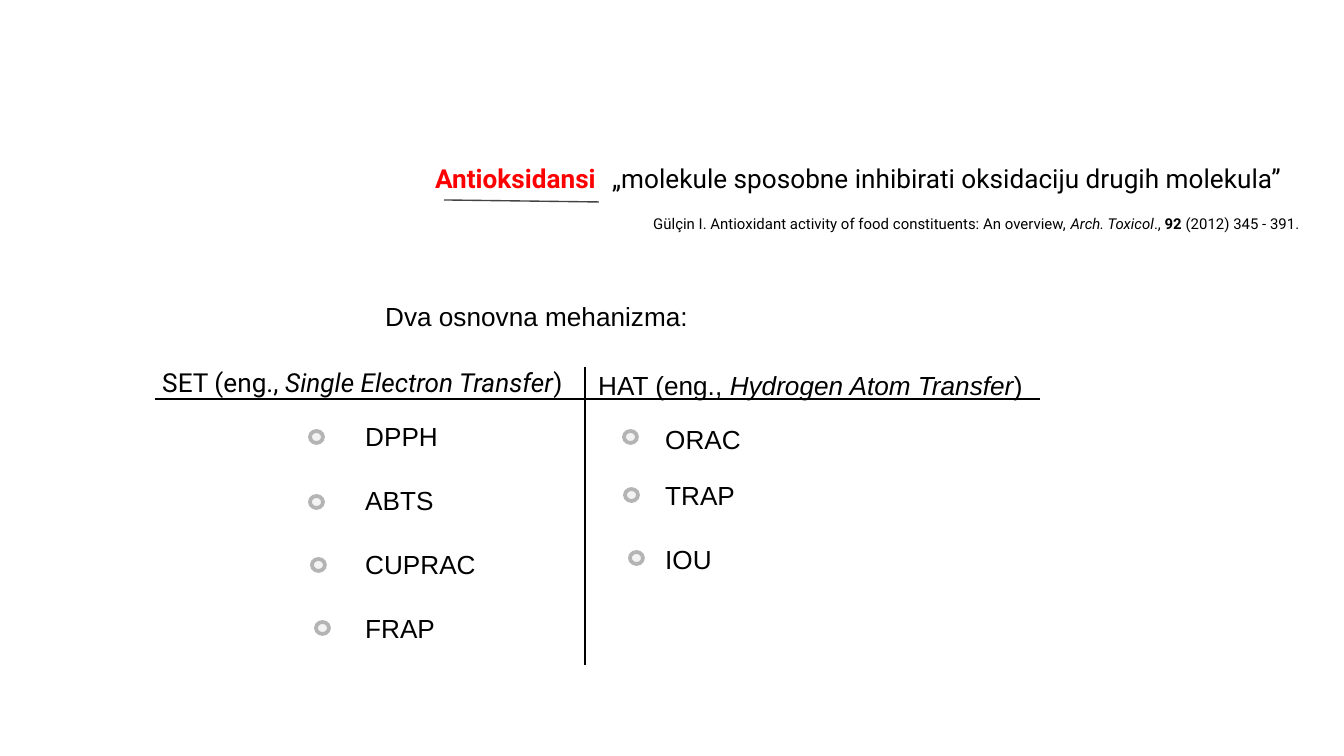
import pptx
import pptx.dml.color
import pptx.enum.shapes
import pptx.enum.text
import pptx.oxml
import pptx.oxml.ns
import pptx.util

PX = 914400 / 134.4
COLOURS = {
    "text": "000000",
    "term": "FF0000",
    "underline": "434343",
    "dot": "F3F3F3",
    "ring": "B4B4B4",
}

deck = pptx.Presentation()
deck.slide_width, deck.slide_height = round(1344 * PX), round(756 * PX)
slide = deck.slides.add_slide(deck.slide_layouts[6])


def emu(*lengths):
    return [round(length * PX) for length in lengths]


def rgb(name):
    return pptx.dml.color.RGBColor.from_string(COLOURS[name])


# Rules: underline of the term, then the two axes of the comparison
for ends, colour in [
    ((444, 200, 599, 202), "underline"),
    ((585, 367, 585, 665), "text"),
    ((155, 399, 1040, 399), "text"),
]:
    rule = slide.shapes.add_connector(
        pptx.enum.shapes.MSO_CONNECTOR.STRAIGHT, *emu(*ends))
    rule.line.color.rgb = rgb(colour)
    rule.line.width = pptx.util.Pt(0.75)
    rule._element.spPr.append(pptx.oxml.parse_xml(
        "<a:effectLst %s/>" % pptx.oxml.ns.nsdecls("a")))

# Hand-placed dots beside the assay names
for left, top in [
    (310, 431), (310, 496), (312, 559), (316, 622),
    (624, 431), (625, 489), (630, 552),
]:
    dot = slide.shapes.add_shape(
        pptx.enum.shapes.MSO_SHAPE.OVAL, *emu(left, top, 13, 12))
    dot.shadow.inherit = False
    dot.fill.solid()
    dot.fill.fore_color.rgb = rgb("dot")
    dot.line.color.rgb = rgb("ring")
    dot.line.width = pptx.util.Pt(2)

# Each text: place, font, size, colour, paragraphs of (words, style) runs
texts = [
    ((422, 156, 198, 46), "Roboto", 14, "term", [[("Antioksidansi", "bold")]]),
    ((599, 156, 718, 77), "Roboto", 14, "text",
     [[("„molekule sposobne inhibirati oksidaciju drugih molekula”", "")]]),
    ((640, 208, 689, 63), "Roboto", 8, "text", [[
        ("Gülçin I. Antioxidant activity of food constituents: An overview, ", ""),
        ("Arch. Toxicol", "italic"),
        ("., ", ""),
        ("92", "bold"),
        (" (2012) 345 - 391.", ""),
    ]]),
    ((372, 294, 332, 46), "Arial", 14, "text", [[("Dva osnovna mehanizma:", "")]]),
    ((149, 360, 464, 78), "Roboto", 14, "text",
     [[("SET (eng., ", ""), ("Single Electron Transfer", "italic"), (")", "")]]),
    ((585, 363, 458, 46), "Arial", 14, "text",
     [[("HAT (eng., ", ""), ("Hydrogen Atom Transfer", "italic"), (")", "")]]),
    ((352, 414, 138, 235), "Arial", 14, "text",
     [[(assay, "")] for assay in ("DPPH", "ABTS", "CUPRAC", "FRAP")]),
    ((652, 417, 103, 46), "Arial", 14, "text", [[("ORAC", "")]]),
    ((652, 473, 98, 109), "Arial", 14, "text",
     [[(assay, "")] for assay in ("TRAP", "IOU")]),
]
for place, font, size, colour, paragraphs in texts:
    frame = slide.shapes.add_textbox(*emu(*place)).text_frame
    frame.word_wrap = False
    frame.auto_size = pptx.enum.text.MSO_AUTO_SIZE.NONE
    for index, runs in enumerate(paragraphs):
        if index:
            paragraph = frame.add_paragraph()
            paragraph.space_before = pptx.util.Pt(17.5)
        else:
            paragraph = frame.paragraphs[0]
        for words, style in runs:
            run = paragraph.add_run()
            run.text = words
            run.font.name = font
            run.font.size = pptx.util.Pt(size)
            run.font.color.rgb = rgb(colour)
            run.font.bold = style == "bold"
            run.font.italic = style == "italic"

deck.save("out.pptx")
